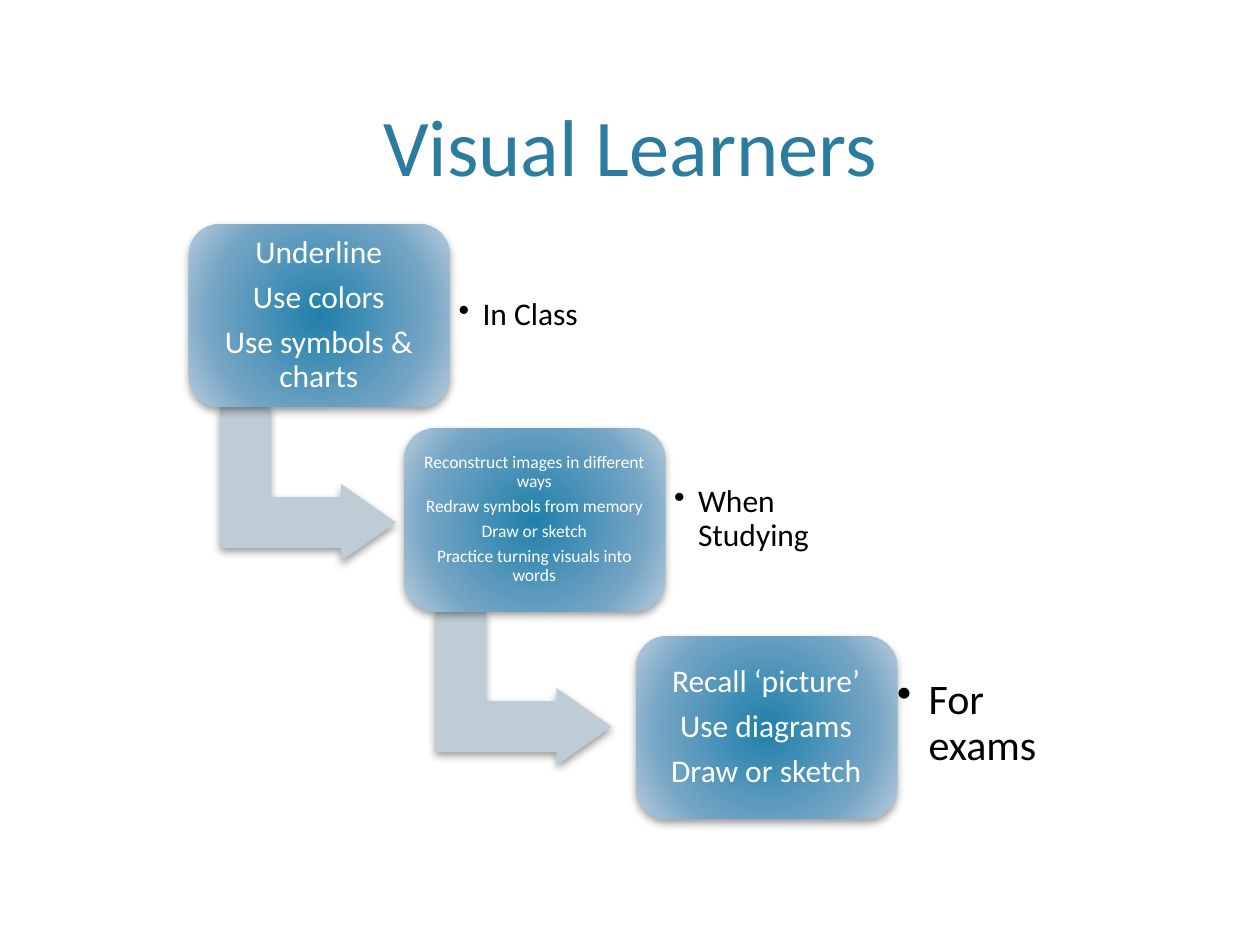
"""Build a slide of three stepped boxes on how visual learners work."""
from pptx import Presentation
from pptx.dml.color import RGBColor as RGB
from pptx.enum.shapes import MSO_SHAPE as SHAPE
from pptx.enum.text import MSO_ANCHOR as ANCHOR, PP_ALIGN as ALIGN
from pptx.oxml import parse_xml as xml
from pptx.util import Inches, Pt

NS = 'xmlns:a="http://schemas.openxmlformats.org/drawingml/2006/main"'
HUES = {"title": "2C7C9F", "arrow": "BECCD6", "core": "2080AB", "mid": "75A5C5",
        "edge": "B8CCDC", "light": "FFFFFF", "dark": "000000"}
STOPS = {"core": 0, "mid": 69, "edge": 100}
STEPS = [
    {"spot": (1.5, 1.78), "size": 18, "pad": 0.07,
     "lines": ["Underline", "Use colors", "Use symbols & charts"],
     "label": {"text": "In Class", "shift": (2.07, 0.14), "size": 18, "pad": 0.07, "hang": 0.19}},
    {"spot": (3.21, 3.4), "size": 10, "pad": 0.04,
     "lines": ["Reconstruct images in different ways", "Redraw symbols from memory",
               "Draw or sketch", "Practice turning visuals into words"],
     "label": {"text": "When Studying", "shift": (2.07, 0.14), "size": 18, "pad": 0.07, "hang": 0.19}},
    {"spot": (5.05, 5.05), "size": 18, "pad": 0.07,
     "lines": ["Recall ‘picture’", "Use diagrams", "Draw or sketch"],
     "label": {"text": "For exams", "shift": (1.94, 0.11), "size": 24, "pad": 0.13, "hang": 0.25}},
]


def assign(item, values):
    """Set attributes of an item from a dict."""
    for name, value in values.items():
        setattr(item, name, value)


class Deck:
    """Hold the style and the current slide."""

    def __init__(self, font="Calibri"):
        """Start a deck with one title-only slide."""
        self.font = font
        self.show = Presentation()
        assign(self.show, {"slide_width": Inches(10), "slide_height": Inches(7.5)})
        self.slide = self.show.slides.add_slide(self.show.slide_layouts[5])

    def place(self, left, top, width, height):
        """Turn inches into a dict of position and size."""
        return {"left": Inches(left), "top": Inches(top),
                "width": Inches(width), "height": Inches(height)}

    def style(self, para, size, hue, **form):
        """Format a paragraph and its font."""
        assign(para, form)
        assign(para.font, {"size": Pt(size), "name": self.font})
        para.font.color.rgb = RGB.from_string(HUES[hue])

    def title(self, text, *area):
        """Fill and move the title."""
        head = self.slide.shapes.title
        assign(head, self.place(*area))
        assign(head.text_frame, {"text": text, "vertical_anchor": ANCHOR.BOTTOM})
        self.style(head.text_frame.paragraphs[0], 46, "title", alignment=ALIGN.CENTER)

    def shape(self, kind, area, adjust):
        """Add a shape without a line, with a soft shadow."""
        item = self.slide.shapes.add_shape(kind, *self.place(*area).values())
        for index, value in enumerate(adjust):
            item.adjustments[index] = value
        item.line.fill.background()
        item.shadow.inherit = False
        glow = item._element.spPr.find("{*}effectLst")
        glow.append(xml(
            f'<a:outerShdw {NS} blurRad="{Pt(5)}" dist="{Pt(2)}" dir="5400000" rotWithShape="0">'
            f'<a:srgbClr val="{HUES["dark"]}"><a:alpha val="40000"/></a:srgbClr></a:outerShdw>'))
        return item

    def arrow(self, left, top):
        """Add a bent arrow that leads down to the next box."""
        item = self.shape(SHAPE.BENT_UP_ARROW, (left, top, 1.23, 1.4), (0.328, 0.25, 0.358))
        item.rotation = 90
        item.fill.solid()
        item.fill.fore_color.rgb = RGB.from_string(HUES["arrow"])

    def box(self, left, top):
        """Add a rounded box with a round gradient."""
        item = self.shape(SHAPE.ROUNDED_RECTANGLE, (left, top, 2.07, 1.45), (0.167,))
        item.fill.background()
        props = item._element.spPr
        stops = "".join(f'<a:gs pos="{pos * 1000}"><a:srgbClr val="{HUES[hue]}"/></a:gs>'
                        for hue, pos in STOPS.items())
        props.replace(props.find("{*}noFill"), xml(
            f'<a:gradFill {NS} rotWithShape="1"><a:gsLst>{stops}</a:gsLst><a:path path="circle">'
            '<a:fillToRect l="100000" t="100000" r="100000" b="100000"/></a:path></a:gradFill>'))

    def text(self, area, lines, size, pad, hue, gap, **form):
        """Add a wrapped text box and return its paragraphs."""
        frame = self.slide.shapes.add_textbox(*self.place(*area).values()).text_frame
        sides = ("margin_left", "margin_top", "margin_right", "margin_bottom")
        assign(frame, {"text": "\n".join(lines), "word_wrap": True,
                       "vertical_anchor": ANCHOR.MIDDLE, **dict.fromkeys(sides, Inches(pad))})
        for para in frame.paragraphs:
            self.style(para, size, hue, line_spacing=0.9, space_after=Pt(size * gap), **form)
        return frame.paragraphs

    def label(self, left, top, text, size, pad, hang):
        """Add a bulleted label."""
        for para in self.text((left, top, 1.5, 1.17), [text], size, pad, "dark", 0.15, level=1):
            props = para._p.get_or_add_pPr()
            props.set("marL", str(Inches(hang)))
            props.set("indent", str(-Inches(hang)))
            props.append(xml(f'<a:buChar {NS} char="•"/>'))

    def step(self, spot, lines, size, pad, label, last):
        """Add one step: arrow, box, text and label."""
        left, top = spot
        if not last:
            self.arrow(left + 0.33, top + 1.36)
        self.box(left, top)
        self.text((left + 0.07, top + 0.07, 1.92, 1.31), lines, size, pad, "light", 0.35,
                  alignment=ALIGN.CENTER)
        right, down = label["shift"]
        rest = {key: value for key, value in label.items() if key != "shift"}
        self.label(left + right, top + down, **rest)


def main():
    """Build and save the slide."""
    deck = Deck()
    deck.title("Visual Learners", 0.6, 0.12, 8.8, 1.46)
    for step in STEPS:
        deck.step(**step, last=step is STEPS[-1])
    deck.show.save("out.pptx")


if __name__ == "__main__":
    main()
